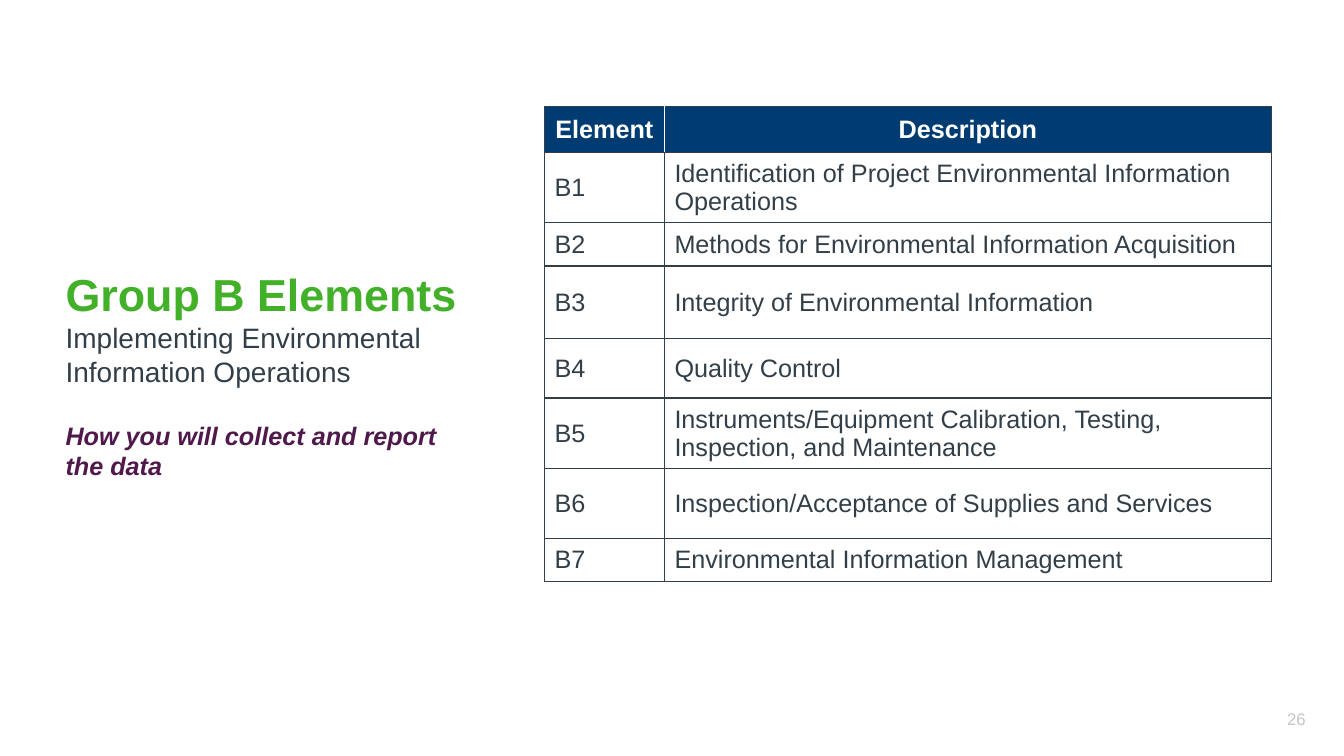
from lxml import etree
from pptx import Presentation
from pptx.dml.color import RGBColor
from pptx.enum import text
from pptx.oxml import ns
from pptx.util import Inches, Pt

# Content
INTRO = [
    ("Group B Elements", dict(size=32, color="green", bold=True)),
    ("Implementing Environmental Information Operations", dict(size=20)),
    ("How you will collect and report the data",
     dict(size=18, color="plum", bold=True, italic=True, before=23)),
]
HEADER = ("Element", "Description")
ELEMENTS = [  # description, row height
    ("Identification of Project Environmental Information Operations", 0.7),
    ("Methods for Environmental Information Acquisition", 0.43),
    ("Integrity of Environmental Information", 0.72),
    ("Quality Control", 0.59),
    ("Instruments/Equipment Calibration, Testing, Inspection, and Maintenance", 0.7),
    ("Inspection/Acceptance of Supplies and Services", 0.69),
    ("Environmental Information Management", 0.43),
]
PAGE_NUMBER = "26"

# Format
COLORS = dict(green="43B02A", slate="333F48", plum="4F194B", navy="003C71",
              white="FFFFFF", gray="C1C6C8")
HEADER_HEIGHT = 0.45
COLUMN_WIDTHS = (1.19, 6.02)
LEFT, CENTER, RIGHT = (text.PP_ALIGN.LEFT, text.PP_ALIGN.CENTER, text.PP_ALIGN.RIGHT)


def write(para, words, size=18, color="slate", bold=False, italic=False,
          align=LEFT, before=0):
    para.alignment = align
    para.space_before = Pt(before)
    span = para.add_run()
    span.text = words
    font = span.font
    font.name, font.size, font.bold, font.italic = "Arial", Pt(size), bold, italic
    font.color.rgb = RGBColor.from_string(COLORS[color])


def set_border(cell, side, color):
    properties = cell._tc.get_or_add_tcPr()
    line = etree.SubElement(properties, ns.qn("a:ln" + side), w=str(Pt(1)))
    fill = etree.SubElement(line, ns.qn("a:solidFill"))
    etree.SubElement(fill, ns.qn("a:srgbClr"), val=COLORS[color])


def place(box, left, top, width, height, anchor):
    box.left, box.top = Inches(left), Inches(top)
    box.width, box.height = Inches(width), Inches(height)
    frame = box.text_frame
    frame.word_wrap = True
    frame.auto_size = text.MSO_AUTO_SIZE.NONE
    frame.vertical_anchor = anchor
    return frame


deck = Presentation()
deck.slide_width, deck.slide_height = Inches(13.33), Inches(7.5)
page = deck.slides.add_slide(deck.slide_layouts[5])

# Title with its subtitle and key question
frame = place(page.shapes.title, 0.55, 2.6, 4.3, 2.26, text.MSO_ANCHOR.TOP)
for index, (words, style) in enumerate(INTRO):
    para = frame.add_paragraph() if index else frame.paragraphs[0]
    write(para, words, **style)

# Table of elements
rows = [HEADER] + [(f"B{number}", description)
                   for number, (description, _) in enumerate(ELEMENTS, 1)]
heights = [HEADER_HEIGHT] + [height for _, height in ELEMENTS]
table = page.shapes.add_table(
    len(rows), len(HEADER), Inches(5.4), Inches(1.06),
    Inches(sum(COLUMN_WIDTHS)), Inches(sum(heights))).table
table.horz_banding = False
for column, width in zip(table.columns, COLUMN_WIDTHS):
    column.width = Inches(width)
for r, (row, height) in enumerate(zip(rows, heights)):
    table.rows[r].height = Inches(height)
    is_header = r == 0
    for c, words in enumerate(row):
        cell = table.cell(r, c)
        cell.vertical_anchor = text.MSO_ANCHOR.MIDDLE
        inner_side = "R" if c == 0 else "L"
        for side in "LRTB":
            set_border(cell, side,
                       "white" if is_header and side == inner_side else "slate")
        cell.fill.solid()
        cell.fill.fore_color.rgb = RGBColor.from_string(
            COLORS["navy" if is_header else "white"])
        write(cell.text_frame.paragraphs[0], words, bold=is_header,
              color="white" if is_header else "slate",
              align=CENTER if is_header else LEFT)

# Page number
number_box = page.shapes.add_textbox(0, 0, 0, 0)
frame = place(number_box, 10.35, 6.93, 2.7, 0.4, text.MSO_ANCHOR.MIDDLE)
write(frame.paragraphs[0], PAGE_NUMBER, size=12, color="gray", align=RIGHT)

deck.save("out.pptx")
